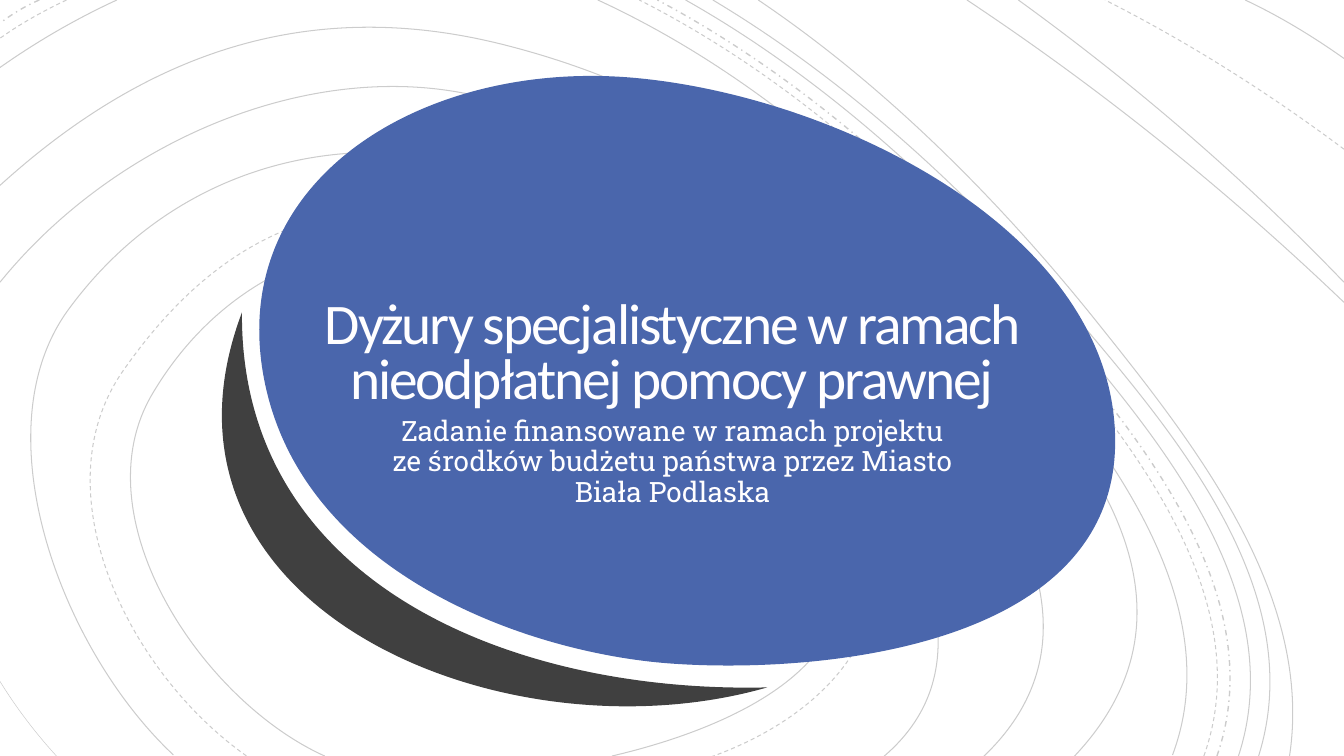
from lxml.etree import SubElement
from pptx import Presentation
from pptx.dml.color import RGBColor
from pptx.enum.dml import MSO_LINE
from pptx.enum.text import MSO_ANCHOR, PP_ALIGN
from pptx.oxml.ns import qn
from pptx.util import Pt

PX = 9144  # EMU per px, 100 px to the inch
SLIDE_WIDTH, SLIDE_HEIGHT = 1333, 750

BLACK = RGBColor(0x00, 0x00, 0x00)
CHARCOAL = RGBColor(0x40, 0x40, 0x40)
BLUE = RGBColor(0x4A, 0x66, 0xAC)
OFF_WHITE = RGBColor(0xFF, 0xFE, 0xFF)
CONTOUR_ALPHA = "20000"
THIN = 0.75

SOLID, DASH, DASH_DOT = MSO_LINE.SOLID, MSO_LINE.DASH, MSO_LINE.DASH_DOT

# A knot is x, y and the handle dx, dy that leads out of it; the handle into it mirrors that.
RINGS = [
    (SOLID, [(876, 751, 149, -126), (738, 315, -93, -90), (412, 153, -125, -12),
             (68, 307, -88, 120), (172, 749, 112, 105)]),
    (SOLID, [(607, 750, 103, -24), (825, 529, -53, -134), (480, 248, -129, -29),
             (151, 391, -72, 122), (322, 750, 122, 55)]),
    (DASH, [(705, 751, 150, -54), (817, 440, -110, -130), (443, 209, -137, -16),
            (122, 368, -83, 119), (246, 751, 119, 83)]),
    (SOLID, [(975, 751, 155, -147), (838, 306, -109, -104), (458, 92, -160, -30),
             (0, 280, -111, 137)]),
    (SOLID, [(1065, 751, 148, -156), (944, 307, -125, -116), (498, 44, -184, -46),
             (0, 184, -152, 138)]),
    (SOLID, [(1279, 750, 24, -160), (1090, 322, -95, -119), (752, 0, -129, -87)]),
]

# The band of arcs runs from the inner to the outer one; each arc has its share of the way.
BAND_INNER = [(1163, 749, 63, -168), (963, 287, -103, -116), (593, 0, -143, -66)]
BAND_OUTER = [(1248, 751, 51, -161), (1070, 318, -100, -118), (707, 0, -139, -83)]
BAND = [(SOLID, THIN, 0), (DASH, THIN, 0.36), (DASH_DOT, 1, 0.52), (SOLID, THIN, 0.76), (SOLID, THIN, 1)]

# Corner strokes run anticlockwise from start to end and bulge outwards.
BULGE = 0.03
CORNER_STROKES = [
    (SOLID, 0.38, (0, 676), (56, 750)),
    (SOLID, THIN, (116, 0), (0, 67)),
    (DASH, THIN, (66, 0), (0, 38)),
    (DASH_DOT, 1, (39, 0), (0, 23)),
    (SOLID, THIN, (1333, 300), (959, 0)),
    (SOLID, THIN, (1333, 280), (1010, 0)),
    (DASH, THIN, (1333, 148), (1096, 0)),
    (SOLID, THIN, (1333, 58), (1235, 0)),
]

EGG = [(261, 371, -34, -196), (626, 77, 203, 17), (1106, 438, 0, 208), (662, 658, -141, -11)]
CRESCENT_INNER = [(240, 310, -2, 270), (761, 682, 251, -6)]
CRESCENT_OUTER = [(761, 682, -261, 75), (240, 310, 110, -292)]

TEXTS = [
    {
        "text": "Dyżury specjalistyczne w ramach nieodpłatnej pomocy prawnej",
        "box": (286, 225, 761, 182),
        "insets": (25, 25, 25, 0),
        "anchor": MSO_ANCHOR.BOTTOM,
        "paragraph": {"alignment": PP_ALIGN.CENTER, "line_spacing": 0.8},
        "font": {"name": "Calibri", "size": Pt(41)},
        "tracking": "-150",
    },
    {
        "text": "Zadanie finansowane w ramach projektu ze środków budżetu państwa przez Miasto Biała Podlaska",
        "box": (371, 414, 592, 131),
        "insets": (10, 0, 10, 5),
        "anchor": MSO_ANCHOR.TOP,
        "paragraph": {"alignment": PP_ALIGN.CENTER, "line_spacing": 0.9, "space_before": Pt(10)},
        "font": {"name": "Roboto Slab", "size": Pt(20)},
        "tracking": "0",
    },
]


def set_all(target, values):
    for attribute, value in values.items():
        setattr(target, attribute, value)


def bezier_points(knots):
    """Return the start point, then two control points and an end point per pair of knots."""
    points = [knots[0][:2]]
    for (x0, y0, dx0, dy0), (x1, y1, dx1, dy1) in zip(knots, knots[1:]):
        points += [(x0 + dx0, y0 + dy0), (x1 - dx1, y1 - dy1), (x1, y1)]
    return points


def blend(inner, outer, share):
    """Return the knots that lie the given share of the way from inner to outer."""
    return [tuple(round(a + (b - a) * share) for a, b in zip(near, far)) for near, far in zip(inner, outer)]


def bulging_knots(start, end):
    (x0, y0), (x1, y1) = start, end
    dx, dy = x1 - x0, y1 - y0
    third_x, third_y = dx / 3, dy / 3
    out_x, out_y = -dy * BULGE, dx * BULGE
    return [(x0, y0, round(third_x + out_x), round(third_y + out_y)),
            (x1, y1, round(third_x - out_x), round(third_y - out_y))]


def add_curve(shapes, points, close):
    """Build a freeform and join each three of its segments into one Bezier curve."""
    builder = shapes.build_freeform(*points[0], scale=PX)
    builder.add_line_segments(points[1:], close=close)
    outline = builder.convert_to_shape()
    outline.shadow.inherit = False
    segments = list(outline.element.iter(qn("a:lnTo")))
    for first in range(0, len(segments) - 2, 3):
        trio = segments[first:first + 3]
        parent = trio[0].getparent()
        curve = SubElement(parent, qn("a:cubicBezTo"))
        parent.replace(trio[0], curve)
        for segment in trio:
            curve.append(segment[0])
        for segment in trio[1:]:
            parent.remove(segment)
    return outline


def add_contour(shapes, dash, width, knots):
    contour = add_curve(shapes, bezier_points(knots), close=False)
    contour.fill.background()
    contour.line.color.rgb = BLACK
    set_all(contour.line, {"width": Pt(width), "dash_style": dash})
    colour = next(contour.element.spPr.iter(qn("a:srgbClr")))
    SubElement(colour, qn("a:alpha"), val=CONTOUR_ALPHA)


def add_blob(shapes, colour, points):
    blob = add_curve(shapes, points, close=True)
    blob.fill.solid()
    blob.fill.fore_color.rgb = colour
    blob.line.fill.background()


def add_text(shapes, content):
    frame = shapes.add_textbox(*(length * PX for length in content["box"])).text_frame
    sides = ("margin_left", "margin_top", "margin_right", "margin_bottom")
    set_all(frame, {side: inset * PX for side, inset in zip(sides, content["insets"])})
    set_all(frame, {"word_wrap": True, "vertical_anchor": content["anchor"]})
    paragraph = frame.paragraphs[0]
    set_all(paragraph, content["paragraph"])
    run = paragraph.add_run()
    run.text = content["text"]
    set_all(run.font, content["font"])
    run.font.color.rgb = OFF_WHITE
    run._r.get_or_add_rPr().set("spc", content["tracking"])


def main():
    presentation = Presentation()
    set_all(presentation, {"slide_width": SLIDE_WIDTH * PX, "slide_height": SLIDE_HEIGHT * PX})
    slide = presentation.slides.add_slide(presentation.slide_layouts[6])
    contours = slide.shapes.add_group_shape().shapes
    for dash, knots in RINGS:
        add_contour(contours, dash, THIN, knots)
    for dash, width, share in BAND:
        add_contour(contours, dash, width, blend(BAND_INNER, BAND_OUTER, share))
    for dash, width, start, end in CORNER_STROKES:
        add_contour(contours, dash, width, bulging_knots(start, end))
    crescent = bezier_points(CRESCENT_INNER) + bezier_points(CRESCENT_OUTER)[1:]
    add_blob(slide.shapes, CHARCOAL, crescent)
    add_blob(slide.shapes, BLUE, bezier_points(EGG + EGG[:1]))
    for content in TEXTS:
        add_text(slide.shapes, content)
    presentation.save("out.pptx")


if __name__ == "__main__":
    main()
